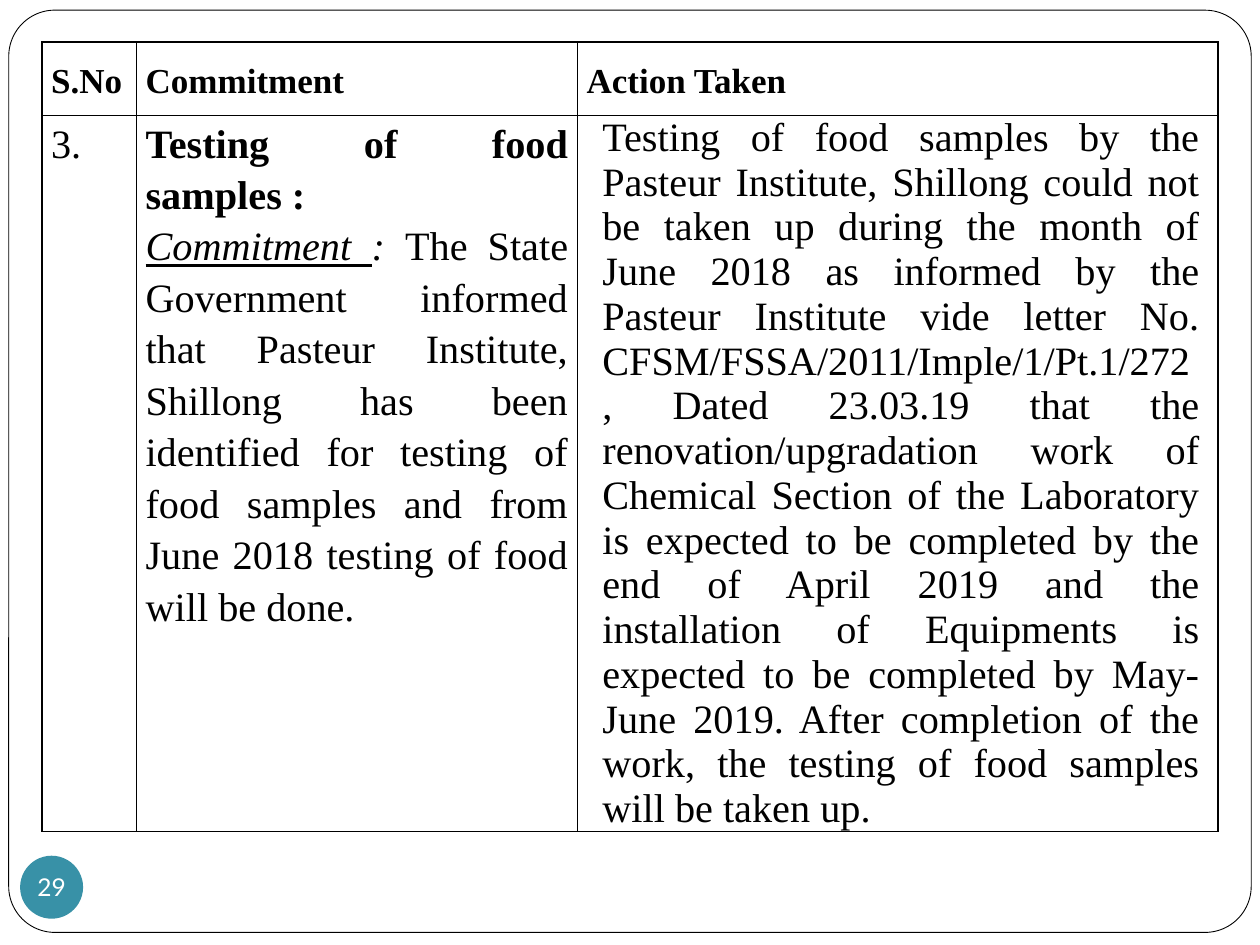
from dataclasses import dataclass
from typing import Any

from lxml.etree import SubElement
from pptx import Presentation
from pptx.dml.color import RGBColor
from pptx.enum.shapes import MSO_SHAPE
from pptx.enum.text import MSO_ANCHOR, PP_ALIGN
from pptx.oxml.ns import qn
from pptx.util import Pt


def color(value):
    return RGBColor.from_string(value)


def add_text(para, text, font="Times New Roman", size=23, ink="000000",
             bold=False, italic=False, underline=False):
    span = para.add_run()
    span.text = text
    span.font.name = font
    span.font.size = Pt(size)
    span.font.color.rgb = color(ink)
    span.font.bold = bold
    span.font.italic = italic
    span.font.underline = underline


@dataclass
class SlideBuilder:
    page: Any
    ink: str = "000000"
    paper: str = "FFFFFF"
    accent: str = "3891A7"

    def shape(self, kind, left, top, width, height, fill, line=None):
        box = self.page.shapes.add_shape(kind, Pt(left), Pt(top), Pt(width), Pt(height))
        box.shadow.inherit = False
        box.fill.solid()
        box.fill.fore_color.rgb = color(fill)
        if line:
            box.line.color.rgb = color(line)
            box.line.width = Pt(0.5)
        else:
            box.line.fill.background()
        return box

    def frame(self):
        box = self.shape(MSO_SHAPE.ROUNDED_RECTANGLE, 5, 5.8, 710, 527, self.paper, self.ink)
        box.adjustments[0] = 0.05

    def page_number(self, number):
        box = self.shape(MSO_SHAPE.OVAL, 11.5, 489, 36, 36, self.accent)
        text_frame = box.text_frame
        text_frame.margin_left = text_frame.margin_right = 0
        text_frame.margin_top = text_frame.margin_bottom = 0
        text_frame.word_wrap = False
        text_frame.vertical_anchor = MSO_ANCHOR.MIDDLE
        para = text_frame.paragraphs[0]
        para.alignment = PP_ALIGN.CENTER
        add_text(para, number, font="Lato", size=14, ink=self.paper)

    def table(self, left, top, widths, heights):
        table = self.page.shapes.add_table(
            len(heights), len(widths), Pt(left), Pt(top),
            Pt(sum(widths)), Pt(sum(heights))).table
        table.first_row = table.horz_banding = False
        for column, width in zip(table.columns, widths):
            column.width = Pt(width)
        for row, height in zip(table.rows, heights):
            row.height = Pt(height)
        return table

    def cell(self, cell, paragraphs, anchor=MSO_ANCHOR.TOP, line_spacing=1.15):
        cell.margin_left = cell.margin_right = Pt(5.2)
        cell.margin_top = cell.margin_bottom = 0
        cell.vertical_anchor = anchor
        self.borders(cell)
        cell.fill.background()
        for index, spans in enumerate(paragraphs):
            para = cell.text_frame.add_paragraph() if index else cell.text_frame.paragraphs[0]
            para.alignment = PP_ALIGN.JUSTIFY
            para.line_spacing = line_spacing
            for text, style in spans:
                add_text(para, text, **style)

    def borders(self, cell):
        properties = cell._tc.get_or_add_tcPr()
        for side in ("a:lnL", "a:lnR", "a:lnT", "a:lnB"):
            line = SubElement(properties, qn(side), w=str(Pt(1)))
            fill = SubElement(line, qn("a:solidFill"))
            SubElement(fill, qn("a:srgbClr"), val=self.ink)

    def indent(self, para, left, right):
        properties = para._p.get_or_add_pPr()
        properties.set("marL", str(Pt(left)))
        properties.set("marR", str(Pt(right)))
        properties.set("indent", "0")


HEADERS = ["S.No", "Commitment", "Action Taken"]
COMMITMENT = [
    [("Testing of food samples :", {"bold": True})],
    [("Commitment ", {"italic": True, "underline": True}),
     (": ", {"italic": True}),
     ("The State Government informed that Pasteur Institute, Shillong has been "
      "identified for testing of food samples and from June 2018 testing of food "
      "will be done.", {})],
]
ACTION = (
    "Testing of food samples by the Pasteur Institute, Shillong could not be taken up "
    "during the month of June 2018 as informed by the Pasteur Institute vide letter No. "
    "CFSM/FSSA/2011/Imple/1/Pt.1/272, Dated 23.03.19 that the renovation/upgradation "
    "work of Chemical Section of the Laboratory is expected to be completed by the end "
    "of April 2019 and the installation of Equipments is expected to be completed by "
    "May-June 2019. After completion of the work, the testing of food samples will be "
    "taken up.")


def main():
    deck = Presentation()
    deck.slide_width, deck.slide_height = Pt(720), Pt(540)
    builder = SlideBuilder(deck.slides.add_slide(deck.slide_layouts[6]))
    builder.frame()
    builder.page_number("29")

    table = builder.table(24, 24, [54, 252, 366], [42, 348])
    for column, header in enumerate(HEADERS):
        builder.cell(table.cell(0, column), [[(header, {"size": 20, "bold": True})]],
                     anchor=MSO_ANCHOR.MIDDLE)
    builder.cell(table.cell(1, 0), [[("3.", {})]])
    builder.cell(table.cell(1, 1), COMMITMENT)
    action_cell = table.cell(1, 2)
    builder.cell(action_cell, [[(ACTION, {})]], line_spacing=1.0)
    para = action_cell.text_frame.paragraphs[0]
    para.space_before = para.space_after = Pt(12)
    builder.indent(para, 9, 5)
    deck.save("out.pptx")


if __name__ == "__main__":
    main()
